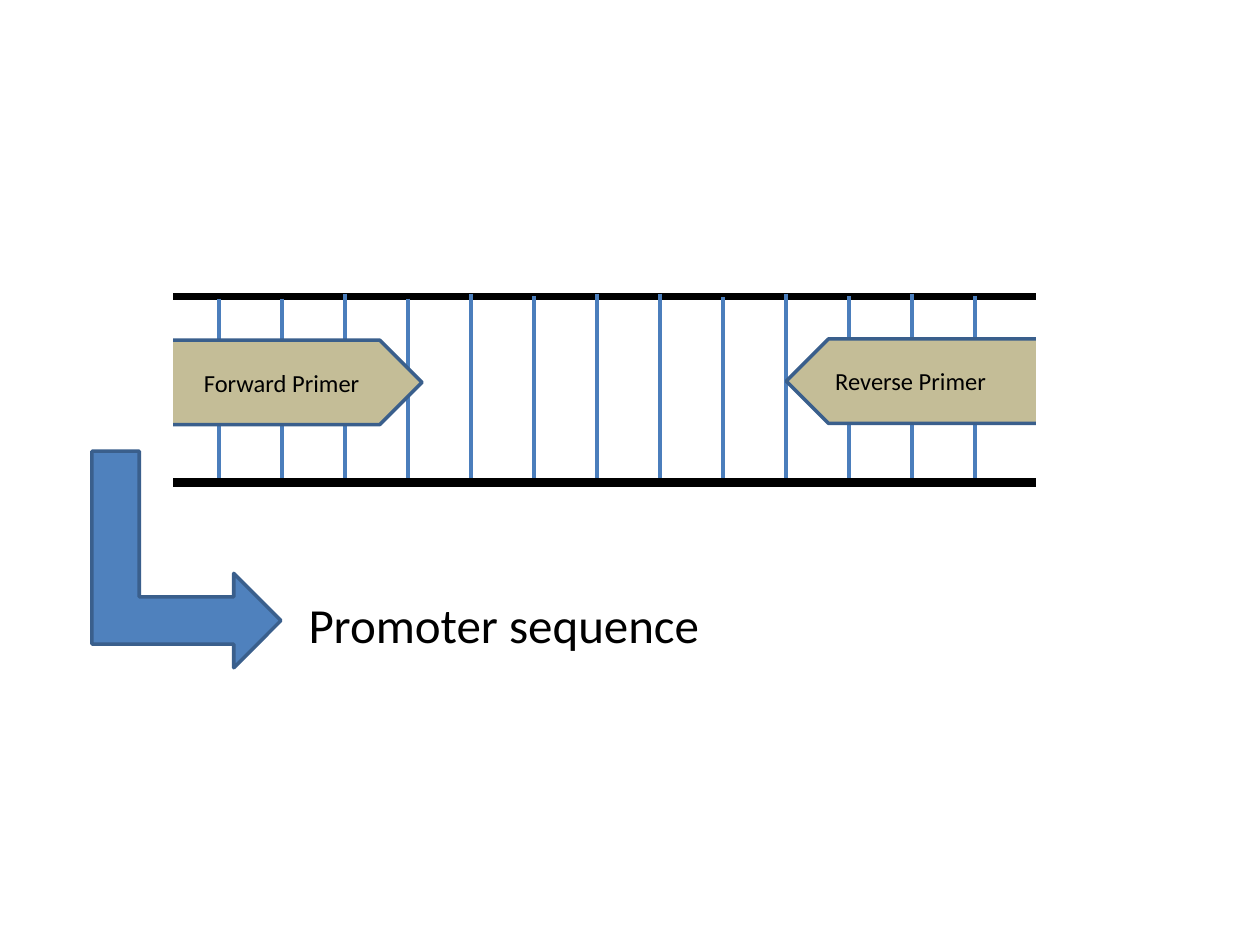
"""Draw a DNA ladder with its two primers and the promoter sequence label."""
from dataclasses import dataclass

from lxml.etree import SubElement
from pptx import Presentation
from pptx.dml.color import RGBColor
from pptx.enum.shapes import MSO_CONNECTOR, MSO_SHAPE
from pptx.oxml.ns import qn
from pptx.slide import Slide
from pptx.util import Inches, Pt

BLACK = RGBColor(0x00, 0x00, 0x00)
WHITE = RGBColor(0xFF, 0xFF, 0xFF)
RUNG_BLUE = RGBColor(0x4B, 0x7E, 0xBC)
ARROW_BLUE = RGBColor(0x4F, 0x81, 0xBD)
OUTLINE_BLUE = RGBColor(0x3A, 0x5F, 0x8C)
PRIMER_TAN = RGBColor(0xC4, 0xBD, 0x97)

FONT = "Calibri"
BOTTOM_STRAND = 3.83
FIRST_RUNG = 1.74
RUNG_GAP = 0.5
RUNG_TOPS = (2.37, 2.37, 2.33, 2.37, 2.33, 2.35, 2.33,
             2.33, 2.36, 2.33, 2.35, 2.33, 2.35)


@dataclass(frozen=True)
class Box:
    left: float
    top: float
    width: float
    height: float

    def lengths(self) -> tuple[int, int, int, int]:
        return (Inches(self.left), Inches(self.top),
                Inches(self.width), Inches(self.height))


@dataclass(frozen=True)
class Block:
    kind: MSO_SHAPE
    box: Box
    fill: RGBColor
    outline: RGBColor
    rotation: float = 0


@dataclass(frozen=True)
class Label:
    text: str
    box: Box
    size: int


@dataclass(frozen=True)
class Line:
    start: tuple[float, float]
    end: tuple[float, float]
    color: RGBColor
    width: float


PRIMERS = (
    (Block(MSO_SHAPE.PENTAGON, Box(1.35, 2.7, 2, 0.67), PRIMER_TAN, OUTLINE_BLUE),
     Label("Forward Primer", Box(1.52, 2.87, 1.5, 0.34), 14)),
    (Block(MSO_SHAPE.PENTAGON, Box(6.24, 2.69, 2, 0.67), PRIMER_TAN, OUTLINE_BLUE, 180),
     Label("Reverse Primer", Box(6.53, 2.86, 1.68, 0.34), 14)),
)
END_COVERS = (Box(0.67, 2.25, 0.69, 1.92), Box(8.24, 2.17, 0.93, 1.92))
PROMOTER_ARROW = Block(MSO_SHAPE.BENT_UP_ARROW, Box(0.62, 3.69, 1.72, 1.5),
                       ARROW_BLUE, OUTLINE_BLUE, 90)
PROMOTER_LABEL = Label("Promoter sequence", Box(2.35, 4.67, 3.89, 0.57), 28)


def draw_line(slide: Slide, line: Line) -> None:
    connector = slide.shapes.add_connector(
        MSO_CONNECTOR.STRAIGHT,
        *(Inches(value) for value in line.start + line.end))
    connector.line.color.rgb = line.color
    connector.line.width = Pt(line.width)
    SubElement(connector._element.spPr, qn("a:effectLst"))


def draw_block(slide: Slide, block: Block) -> None:
    shape = slide.shapes.add_shape(block.kind, *block.box.lengths())
    shape.rotation = block.rotation
    shape.shadow.inherit = False
    shape.fill.solid()
    shape.fill.fore_color.rgb = block.fill
    shape.line.color.rgb = block.outline
    shape.line.width = Pt(2)


def draw_label(slide: Slide, label: Label) -> None:
    text_frame = slide.shapes.add_textbox(*label.box.lengths()).text_frame
    text_frame.word_wrap = True
    run = text_frame.paragraphs[0].add_run()
    run.text = label.text
    run.font.name = FONT
    run.font.size = Pt(label.size)
    run.font.color.rgb = BLACK


def draw_ladder(slide: Slide) -> None:
    draw_line(slide, Line((0.82, 2.35), (8.91, 2.35), BLACK, 4))
    for index, top in enumerate(RUNG_TOPS):
        across = FIRST_RUNG + index * RUNG_GAP
        draw_line(slide, Line((across, top), (across, BOTTOM_STRAND), RUNG_BLUE, 2))
    for block, label in PRIMERS:
        draw_block(slide, block)
        draw_label(slide, label)
    draw_line(slide, Line((0.81, BOTTOM_STRAND), (8.9, BOTTOM_STRAND), BLACK, 5))
    for box in END_COVERS:
        draw_block(slide, Block(MSO_SHAPE.FLOWCHART_PROCESS, box, WHITE, WHITE))


def main() -> None:
    presentation = Presentation()
    presentation.slide_width = Inches(10)
    presentation.slide_height = Inches(7.5)
    slide = presentation.slides.add_slide(presentation.slide_layouts[6])
    draw_ladder(slide)
    draw_block(slide, PROMOTER_ARROW)
    draw_label(slide, PROMOTER_LABEL)
    presentation.save("out.pptx")


if __name__ == "__main__":
    main()
